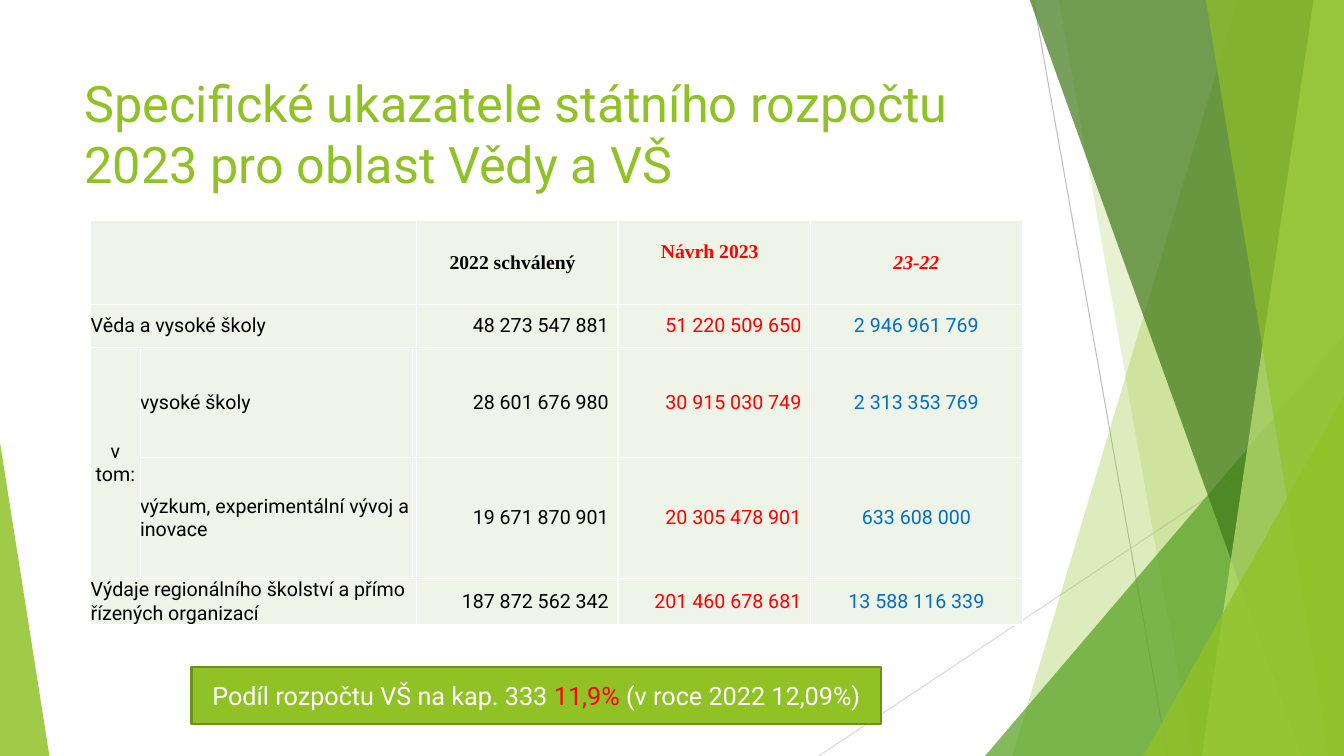
from lxml.etree import SubElement
from pptx import Presentation
from pptx.dml.color import RGBColor
from pptx.enum.shapes import MSO_CONNECTOR, MSO_SHAPE
from pptx.enum.text import MSO_ANCHOR, MSO_AUTO_SIZE, PP_ALIGN
from pptx.oxml.ns import qn
from pptx.util import Inches, Pt

WIDTH, HEIGHT = 13.33, 7.5
COLORS = {
    "green": "90C226", "leaf": "54A021", "forest": "3F7819", "lime": "C0E474",
    "outline": "6B901C", "cell": "EEF4E8", "white": "FFFFFF", "black": "000000",
    "red": "FF0000", "blue": "0070C0", "gray": "BFBFBF", "light_gray": "D9D9D9",
}
SANS, SERIF = "Roboto", "Times New Roman"
LEFT, CENTER, RIGHT = PP_ALIGN.LEFT, PP_ALIGN.CENTER, PP_ALIGN.RIGHT

RAYS = [((10.25, 0), (11.58, HEIGHT), "gray"), ((WIDTH, 4.03), (8.12, HEIGHT), "light_gray")]
FACETS = [
    ("band", 12.28, 10.04, "green", 30),
    ("band", 10.5, 11.83, "green", 20),
    ("triangle", (9.77, 3.33, 3.56, 4.17), 1, "leaf", 72),
    ("band", 10.21, 12.91, "forest", 70),
    ("band", 13.03, 11.92, "lime", 70),
    ("band", 11.96, 13.18, "green", 65),
    ("triangle", (11.34, 3.93, 1.99, 3.57), 1, "green", 80),
    ("triangle", (0, 4.39, 0.49, 3.11), 0, "green", 85),
]

COLUMNS = [0.49, 2.7, 0.04, 2, 1.91, 2.1]
ROWS = [0.83, 0.43, 1.09, 1.2, 0.44]
HEADINGS = [("2022 schválený", "black"), ("Návrh 2023", "red"), ("23-22", "red")]
LABELS = [
    (1, 0, "Věda a vysoké školy", LEFT),
    (2, 0, "v tom:", CENTER),
    (2, 1, "vysoké školy", LEFT),
    (3, 1, "výzkum, experimentální vývoj a inovace", LEFT),
    (4, 0, "Výdaje regionálního školství a přímo řízených organizací", LEFT),
]
AMOUNTS = [
    ("48 273 547 881", "51 220 509 650", "2 946 961 769"),
    ("28 601 676 980", "30 915 030 749", "2 313 353 769"),
    ("19 671 870 901", "20 305 478 901", "633 608 000"),
    ("187 872 562 342", "201 460 678 681", "13 588 116 339"),
]
AMOUNT_STYLES = [("black", RIGHT, 0.09), ("red", RIGHT, 0.09), ("blue", CENTER, 0)]


def color(name):
    """Return the named palette colour."""
    return RGBColor.from_string(COLORS[name])


def add_run(paragraph, text, size, color_name, font_name=SANS, bold=False, italic=False):
    """Append one formatted run to a paragraph."""
    run = paragraph.add_run()
    run.text = text
    font = run.font
    font.size, font.name, font.bold, font.italic = Pt(size), font_name, bold, italic
    font.color.rgb = color(color_name)


def fill_facet(shape, color_name, opacity):
    """Give a shape a translucent fill without line or shadow."""
    shape.shadow.inherit = False
    shape.line.fill.background()
    shape.fill.solid()
    shape.fill.fore_color.rgb = color(color_name)
    tint = shape.fill._xPr.find(qn("a:solidFill"))[0]
    SubElement(tint, qn("a:alpha"), val=str(opacity * 1000))


def add_backdrop(slide):
    """Draw the thin rays and the green facets at the slide edges."""
    for start, end, color_name in RAYS:
        ray = slide.shapes.add_connector(
            MSO_CONNECTOR.STRAIGHT, *(Inches(value) for value in start + end))
        ray.line.color.rgb = color(color_name)
        ray.line.width = Pt(0.75)
        SubElement(ray._element.spPr, qn("a:effectLst"))
    for kind, geometry, detail, color_name, opacity in FACETS:
        if kind == "band":
            builder = slide.shapes.build_freeform(
                Inches(geometry), Inches(-0.01))
            corners = [(WIDTH, -0.01), (WIDTH, HEIGHT), (detail, HEIGHT)]
            builder.add_line_segments([(Inches(x), Inches(y)) for x, y in corners])
            facet = builder.convert_to_shape()
        else:
            facet = slide.shapes.add_shape(
                MSO_SHAPE.ISOSCELES_TRIANGLE, *(Inches(value) for value in geometry))
            facet.adjustments[0] = detail
        fill_facet(facet, color_name, opacity)


def add_title(slide, left, top, width, height):
    """Place the slide title in its placeholder."""
    title = slide.shapes.title
    title.left, title.top = Inches(left), Inches(top)
    title.width, title.height = Inches(width), Inches(height)
    frame = title.text_frame
    frame.word_wrap = True
    frame.auto_size = MSO_AUTO_SIZE.NONE
    frame.vertical_anchor = MSO_ANCHOR.TOP
    paragraph = frame.paragraphs[0]
    paragraph.alignment = LEFT
    add_run(paragraph, "Specifické ukazatele státního rozpočtu 2023 pro oblast Vědy a VŠ",
            36, "green")


def format_cell(cell):
    """Give a cell white borders, the pale fill and no margins."""
    properties = cell._tc.get_or_add_tcPr()
    for side in ("lnL", "lnR", "lnT", "lnB"):
        border = SubElement(properties, qn("a:" + side), w=str(Pt(1)))
        SubElement(SubElement(border, qn("a:solidFill")), qn("a:srgbClr"), val=COLORS["white"])
    cell.fill.solid()
    cell.fill.fore_color.rgb = color("cell")
    cell.margin_left = cell.margin_right = cell.margin_top = cell.margin_bottom = 0
    cell.vertical_anchor = MSO_ANCHOR.MIDDLE


def write_cell(cell, text, color_name, alignment, margin_right=0, **style):
    """Write one aligned run into a cell."""
    cell.margin_right = Inches(margin_right)
    paragraph = cell.text_frame.paragraphs[0]
    paragraph.alignment = alignment
    add_run(paragraph, text, 14, color_name, **style)


def add_budget_table(slide, left, top):
    """Build the budget table from its column and row grid."""
    frame = slide.shapes.add_table(
        len(ROWS), len(COLUMNS), Inches(left), Inches(top),
        Inches(sum(COLUMNS)), Inches(sum(ROWS)))
    table = frame.table
    table.first_row = table.horz_banding = False
    for column, width in zip(table.columns, COLUMNS):
        column.width = Inches(width)
    for row, height in zip(table.rows, ROWS):
        row.height = Inches(height)
    for cell in table.iter_cells():
        format_cell(cell)
    for row in (0, 1, 4):
        table.cell(row, 0).merge(table.cell(row, 2))
    table.cell(2, 0).merge(table.cell(3, 0))

    for column, ((text, color_name), (_, _, margin)) in enumerate(zip(HEADINGS, AMOUNT_STYLES), 3):
        write_cell(table.cell(0, column), text, color_name, CENTER, margin,
                   font_name=SERIF, bold=True, italic=column == 5)
    table.cell(0, 4).margin_bottom = Inches(0.22)
    for row, column, text, alignment in LABELS:
        write_cell(table.cell(row, column), text, "black", alignment)
    for row, amounts in enumerate(AMOUNTS, 1):
        for column, (amount, style) in enumerate(zip(amounts, AMOUNT_STYLES), 3):
            write_cell(table.cell(row, column), amount, *style)


def add_share_banner(slide, left, top, width, height):
    """Add the green banner with the share of the universities."""
    banner = slide.shapes.add_shape(
        MSO_SHAPE.RECTANGLE, Inches(left), Inches(top), Inches(width), Inches(height))
    banner.shadow.inherit = False
    banner.fill.solid()
    banner.fill.fore_color.rgb = color("green")
    banner.line.color.rgb = color("outline")
    banner.line.width = Pt(1.5)
    banner.text_frame.word_wrap = True
    banner.text_frame.vertical_anchor = MSO_ANCHOR.MIDDLE
    paragraph = banner.text_frame.paragraphs[0]
    paragraph.alignment = CENTER
    add_run(paragraph, "Podíl rozpočtu VŠ na kap. 333 ", 18, "white")
    add_run(paragraph, "11,9%", 18, "red")
    add_run(paragraph, " (v roce 2022 12,09%)", 18, "white")


def main():
    """Build and save the presentation."""
    presentation = Presentation()
    presentation.slide_width, presentation.slide_height = Inches(WIDTH), Inches(HEIGHT)
    slide = presentation.slides.add_slide(presentation.slide_layouts[5])
    add_backdrop(slide)
    add_title(slide, 0.74, 0.67, 9.4, 1.44)
    add_budget_table(slide, 0.9, 2.19)
    add_share_banner(slide, 1.9, 6.62, 6.84, 0.56)
    presentation.save("out.pptx")


if __name__ == "__main__":
    main()
